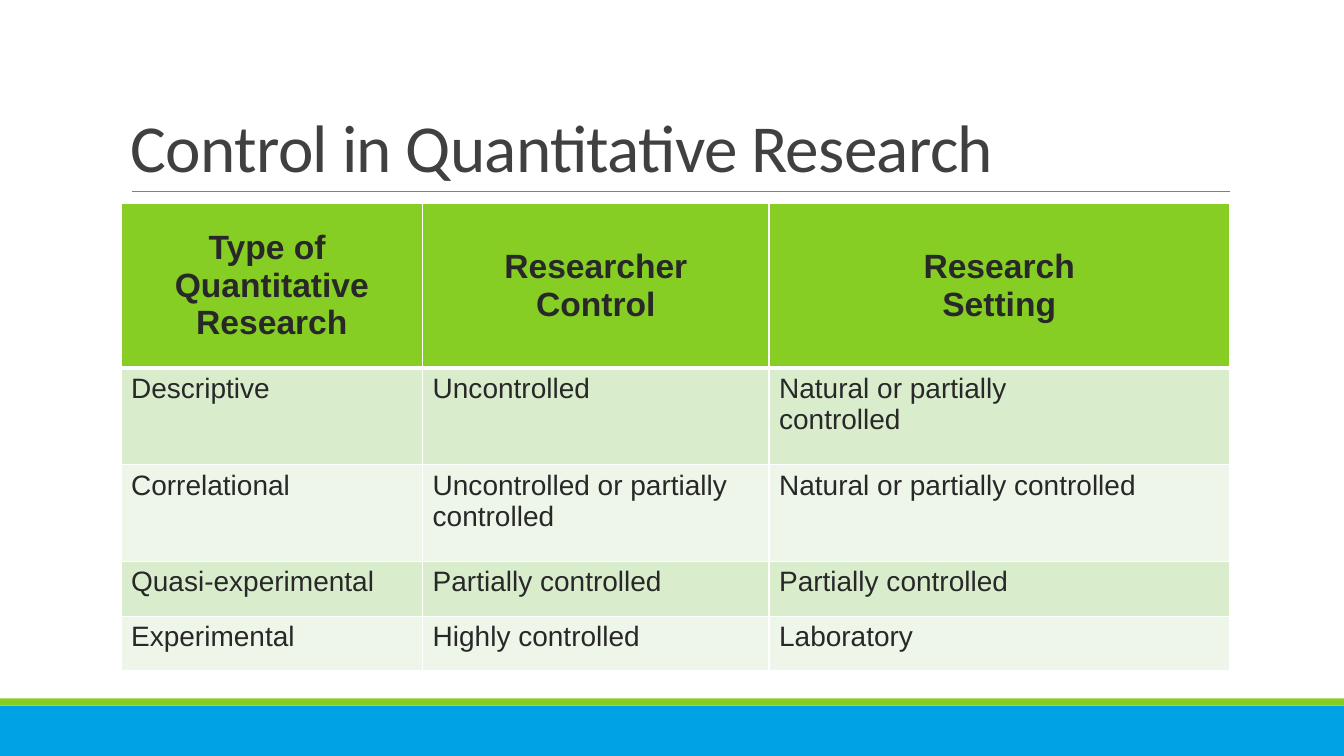
from dataclasses import dataclass

from lxml import etree
from pptx import Presentation
from pptx.dml.color import RGBColor
from pptx.enum.shapes import MSO_CONNECTOR, MSO_SHAPE
from pptx.enum.text import MSO_ANCHOR, PP_ALIGN
from pptx.oxml.ns import qn
from pptx.util import Cm, Pt

RECTANGLE = MSO_SHAPE.RECTANGLE
STRAIGHT = MSO_CONNECTOR.STRAIGHT
TOP, MIDDLE, BOTTOM = MSO_ANCHOR.TOP, MSO_ANCHOR.MIDDLE, MSO_ANCHOR.BOTTOM
LEFT, CENTER = PP_ALIGN.LEFT, PP_ALIGN.CENTER


@dataclass(frozen=True)
class Theme:
    blue: str = "00A2E6"
    green: str = "86CE24"
    rule: str = "808080"
    title: str = "404040"
    text: str = "282828"
    border: str = "FFFFFF"
    bands: tuple = ("D9EDCD", "EDF6E8")
    title_font: str = "Calibri"
    table_font: str = "Arial"
    title_size: int = 48
    header_size: int = 24
    body_size: int = 20


@dataclass(frozen=True)
class Box:
    left: float
    top: float
    width: float
    height: float

    def lengths(self):
        return Cm(self.left), Cm(self.top), Cm(self.width), Cm(self.height)


THEME = Theme()
PAGE = Box(0, 0, 33.87, 19.05)
TITLE = "Control in Quantitative Research"
COLUMN_WIDTHS = (7.6, 8.73, 11.6)
ROW_HEIGHTS = (4.14, 2.44, 2.44, 1.38, 1.38)
ROWS = (
    (("Type of ", "Quantitative Research"), ("Researcher", "Control"), ("Research", "Setting")),
    (("Descriptive",), ("Uncontrolled",), ("Natural or partially", "controlled")),
    (("Correlational",), ("Uncontrolled or partially controlled",),
     ("Natural or partially controlled",)),
    (("Quasi-experimental",), ("Partially controlled",), ("Partially controlled",)),
    (("Experimental",), ("Highly controlled",), ("Laboratory",)),
)


def add_span(para, text, font, size, color, bold=False):
    span = para.add_run()
    span.text = text
    span.font.name = font
    span.font.size = Pt(size)
    span.font.bold = bold
    span.font.color.rgb = RGBColor.from_string(color)
    return span


def add_band(page, box, color):
    band = page.shapes.add_shape(RECTANGLE, *box.lengths())
    band.shadow.inherit = False
    band.fill.solid()
    band.fill.fore_color.rgb = RGBColor.from_string(color)
    band.line.fill.background()


def add_footer(page, box):
    stripe = 0.18
    add_band(page, Box(box.left, box.top + stripe, box.width, box.height - stripe), THEME.blue)
    add_band(page, Box(box.left, box.top, box.width, stripe), THEME.green)


def add_title(page, box):
    inset = 0.27
    left, bottom = Cm(box.left + inset), Cm(box.top + box.height)
    rule = page.shapes.add_connector(STRAIGHT, left, bottom, Cm(box.left + box.width - 0.1), bottom)
    rule.line.color.rgb = RGBColor.from_string(THEME.rule)
    rule.line.width = Pt(0.5)
    etree.SubElement(rule._element.spPr, qn("a:effectLst"))

    frame = page.shapes.add_textbox(*box.lengths()).text_frame
    frame.word_wrap = True
    frame.vertical_anchor = BOTTOM
    para = frame.paragraphs[0]
    para.line_spacing = 0.85
    span = add_span(para, TITLE, THEME.title_font, THEME.title_size, THEME.title)
    span.font._element.set("spc", "-50")


def set_borders(cell, top, bottom):
    properties = cell._tc.get_or_add_tcPr()
    for side, points in (("L", 1), ("R", 1), ("T", top), ("B", bottom)):
        line = etree.SubElement(properties, qn(f"a:ln{side}"), w=str(Pt(points)))
        fill = etree.SubElement(line, qn("a:solidFill"))
        etree.SubElement(fill, qn("a:srgbClr"), val=THEME.border)


def fill_cell(cell, lines, row):
    header = row == 0
    set_borders(cell, top=3 if row == 1 else 1, bottom=3 if header else 1)
    cell.fill.solid()
    color = THEME.green if header else THEME.bands[(row - 1) % 2]
    cell.fill.fore_color.rgb = RGBColor.from_string(color)
    cell.vertical_anchor = MIDDLE if header else TOP
    size = THEME.header_size if header else THEME.body_size
    frame = cell.text_frame
    for index, text in enumerate(lines):
        para = frame.add_paragraph() if index else frame.paragraphs[0]
        para.alignment = CENTER if header else LEFT
        add_span(para, text, THEME.table_font, size, THEME.text, header)


def add_control_table(page, box):
    table = page.shapes.add_table(len(ROWS), len(COLUMN_WIDTHS), *box.lengths()).table
    for column, width in zip(table.columns, COLUMN_WIDTHS):
        column.width = Cm(width)
    for row, height in zip(table.rows, ROW_HEIGHTS):
        row.height = Cm(height)
    for row, entries in enumerate(ROWS):
        for column, lines in enumerate(entries):
            fill_cell(table.cell(row, column), lines, row)


def main():
    deck = Presentation()
    deck.slide_width, deck.slide_height = Cm(PAGE.width), Cm(PAGE.height)
    page = deck.slides.add_slide(deck.slide_layouts[6])
    add_footer(page, Box(0, 17.6, PAGE.width, PAGE.height - 17.6))
    add_title(page, Box(3.05, 0.79, 28.05, 4.03))
    add_control_table(page, Box(3.05, 5.13, sum(COLUMN_WIDTHS), sum(ROW_HEIGHTS)))
    deck.save("out.pptx")


if __name__ == "__main__":
    main()
